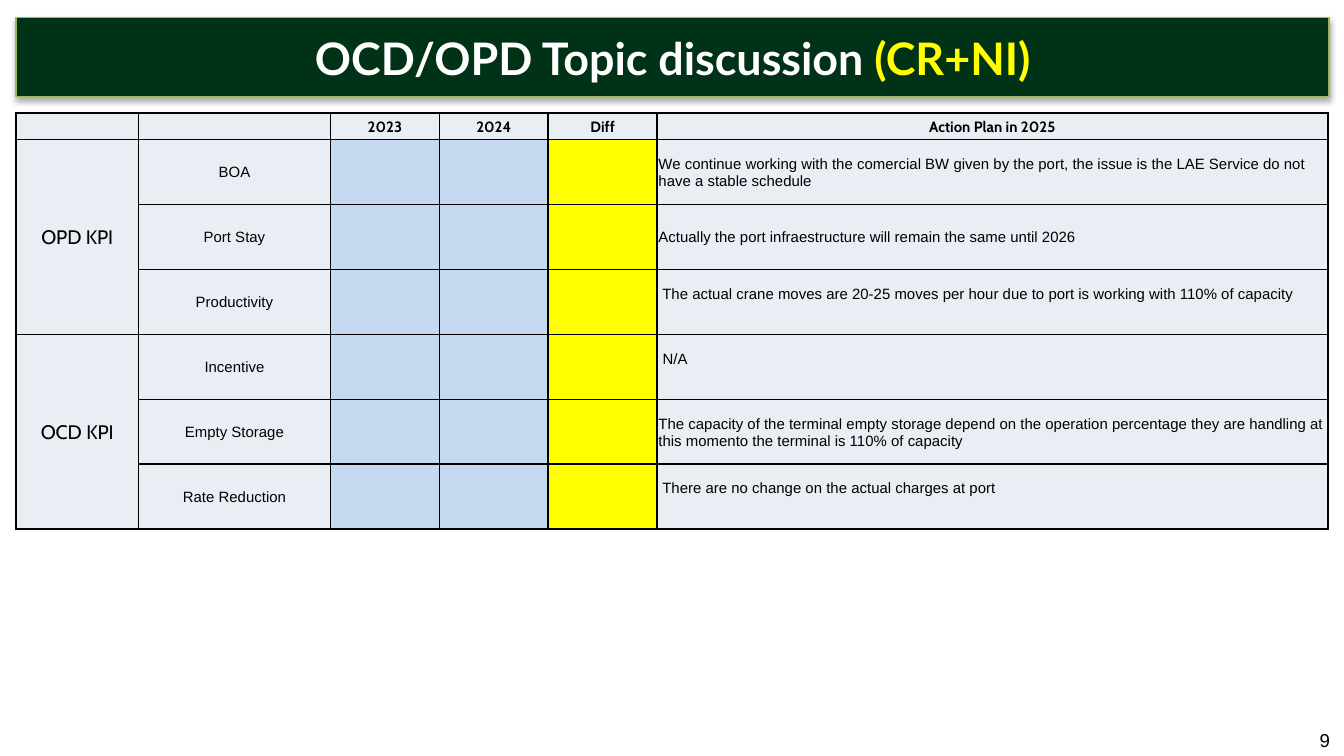
from dataclasses import dataclass

import pptx
import pptx.dml.color
import pptx.enum.text
import pptx.oxml
import pptx.oxml.ns
import pptx.util
from pptx.util import Inches


@dataclass(frozen=True)
class Theme:
    banner: str = "003217"
    banner_line: str = "98B955"
    white: str = "FFFFFF"
    black: str = "000000"
    yellow: str = "FFFF00"
    label: str = "E9EDF4"
    value: str = "C6D9F1"
    title_font: str = "Lato"
    head_font: str = "Cabin"
    body_font: str = "Arial"
    title_size: float = 24
    group_size: float = 10.5
    body_size: float = 8
    empty_size: float = 11
    number_size: float = 10


THEME = Theme()
ALIGN = pptx.enum.text.PP_ALIGN
MIDDLE = pptx.enum.text.MSO_ANCHOR.MIDDLE
HEADERS = ["", "", "2023", "2024", "Diff", "Action Plan in 2025"]
GROUPS = {
    "OPD KPI": [
        ("BOA", "We continue working with the comercial BW given by the port, "
                "the issue is the LAE Service do not have a stable schedule", False),
        ("Port Stay", "Actually the port infraestructure will remain the same until 2026", False),
        ("Productivity", " The actual crane moves are 20-25 moves per hour due to port "
                         "is working with 110% of capacity", True),
    ],
    "OCD KPI": [
        ("Incentive", " N/A", True),
        ("Empty Storage", "The capacity of the terminal empty storage depend on the operation "
                          "percentage they are handling at this momento the terminal is "
                          "110% of capacity", False),
        ("Rate Reduction", " There are no change on the actual charges at port", True),
    ],
}


def rgb(color):
    return pptx.dml.color.RGBColor.from_string(color)


def format_run(run, font, size, color=THEME.black, bold=False):
    run.font.name = font
    run.font.size = pptx.util.Pt(size)
    run.font.color.rgb = rgb(color)
    run.font.bold = bold


def add_shadow(shape):
    shape._element.spPr.append(pptx.oxml.parse_xml(
        f'<a:effectLst {pptx.oxml.ns.nsdecls("a")}>'
        f'<a:outerShdw blurRad="{pptx.util.Pt(3.1)}" dist="{pptx.util.Pt(1.8)}" '
        f'dir="5400000" rotWithShape="0"><a:srgbClr val="{THEME.black}">'
        '<a:alpha val="35000"/></a:srgbClr></a:outerShdw></a:effectLst>'))


def add_borders(cell):
    properties = cell._tc.get_or_add_tcPr()
    for side in ("lnL", "lnR", "lnT", "lnB"):
        properties.append(pptx.oxml.parse_xml(
            f'<a:{side} {pptx.oxml.ns.nsdecls("a")} w="{pptx.util.Pt(1)}">'
            f'<a:solidFill><a:srgbClr val="{THEME.black}"/></a:solidFill></a:{side}>'))


def place_banner(slide, left, top, width, height):
    title = slide.shapes.title
    title.left, title.top, title.width, title.height = map(Inches, (left, top, width, height))
    title.fill.solid()
    title.fill.fore_color.rgb = rgb(THEME.banner)
    title.line.color.rgb = rgb(THEME.banner_line)
    title.line.width = pptx.util.Pt(0.75)
    add_shadow(title)
    frame = title.text_frame
    frame.auto_size = pptx.enum.text.MSO_AUTO_SIZE.NONE
    frame.word_wrap = True
    frame.vertical_anchor = MIDDLE
    frame.margin_left = frame.margin_right = frame.margin_top = frame.margin_bottom = 0
    paragraph = frame.paragraphs[0]
    paragraph.alignment = ALIGN.CENTER
    for text, color in (("OCD/OPD Topic discussion ", THEME.white), ("(CR+NI)", THEME.yellow)):
        run = paragraph.add_run()
        run.text = text
        format_run(run, THEME.title_font, THEME.title_size, color, True)


def style_cell(cell, fill):
    add_borders(cell)
    cell.fill.solid()
    cell.fill.fore_color.rgb = rgb(fill)
    cell.vertical_anchor = MIDDLE
    cell.margin_left = cell.margin_right = cell.margin_top = Inches(0.01)
    cell.margin_bottom = 0
    end = cell.text_frame.paragraphs[0]._p.get_or_add_endParaRPr()
    end.set("sz", str(THEME.empty_size * 100))


def write_cell(cell, text, font=THEME.body_font, size=THEME.body_size, bold=False,
               alignment=ALIGN.CENTER):
    paragraph = cell.text_frame.paragraphs[0]
    paragraph.text = text
    paragraph.alignment = alignment
    for run in paragraph.runs:
        format_run(run, font, size, bold=bold)


def place_kpi_table(slide, left, top, width, height, header_height):
    entries = [entry for group in GROUPS.values() for entry in group]
    row_height = (height - header_height) / len(entries)
    table = slide.shapes.add_table(len(entries) + 1, len(HEADERS),
                                   *map(Inches, (left, top, width, height))).table
    table.first_row = table.horz_banding = False
    widths = [0.91, 1.43, 0.81, 0.81, 0.81]
    for column, column_width in zip(table.columns, widths + [width - sum(widths)]):
        column.width = Inches(column_width)
    for index, row in enumerate(table.rows):
        row.height = Inches(row_height if index else header_height)
        fills = [THEME.label] * len(HEADERS)
        if index:
            fills[2:5] = [THEME.value, THEME.value, THEME.yellow]
        for cell, fill in zip(row.cells, fills):
            style_cell(cell, fill)

    for column, text in enumerate(HEADERS):
        if text:
            write_cell(table.cell(0, column), text, THEME.head_font, bold=True)
    first = 1
    for group, group_entries in GROUPS.items():
        last = first + len(group_entries) - 1
        table.cell(first, 0).merge(table.cell(last, 0))
        write_cell(table.cell(first, 0), group, THEME.head_font, THEME.group_size)
        first = last + 1
    for index, (name, action, raised) in enumerate(entries, 1):
        write_cell(table.cell(index, 1), name)
        action_cell = table.cell(index, 5)
        write_cell(action_cell, action, alignment=ALIGN.LEFT)
        if raised:
            action_cell.margin_bottom = Inches(0.13)


def place_slide_number(slide, left, top, width, height):
    box = slide.shapes.add_textbox(*map(Inches, (left, top, width, height)))
    frame = box.text_frame
    frame.word_wrap = True
    frame.vertical_anchor = MIDDLE
    frame.text = "9"
    format_run(frame.paragraphs[0].runs[0], THEME.body_font, THEME.number_size)


def main():
    presentation = pptx.Presentation()
    presentation.slide_width = Inches(10)
    presentation.slide_height = presentation.slide_width * 9 // 16
    slide = presentation.slides.add_slide(presentation.slide_layouts[5])
    place_banner(slide, 0.12, 0.13, 9.77, 0.59)
    place_kpi_table(slide, 0.12, 0.84, 9.76, 3.07, 0.17)
    place_slide_number(slide, 9.72, 5.39, 0.64, 0.23)
    presentation.save("out.pptx")


if __name__ == "__main__":
    main()
